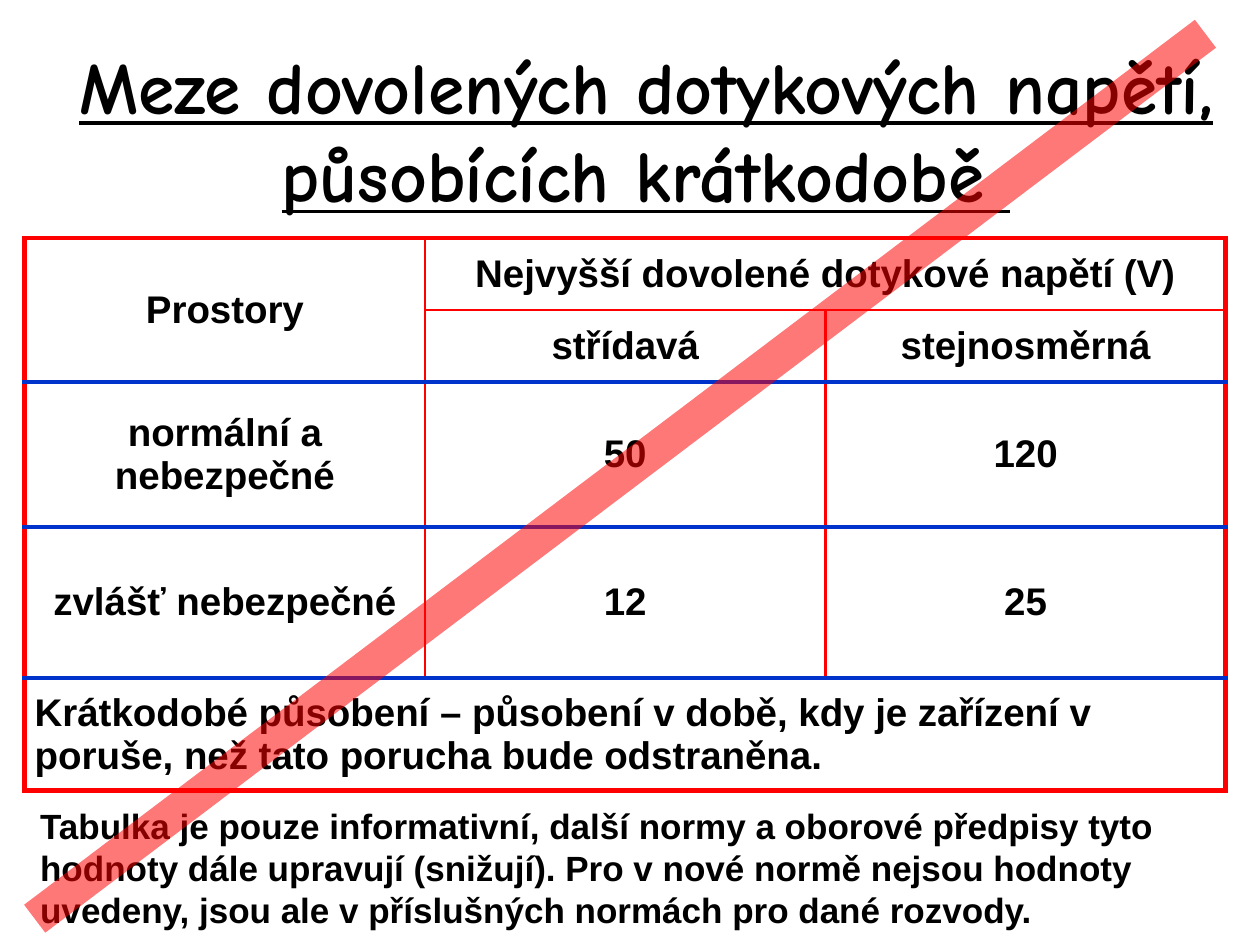
"""Build a slide with limits of permitted touch voltages, crossed out by a red line."""
from lxml import etree
from pptx import Presentation
from pptx import util as u
from pptx.dml.color import RGBColor
from pptx.enum import shapes, text
from pptx.oxml.ns import qn

BLACK = RGBColor(0, 0, 0)
WHITE = RGBColor(255, 255, 255)
RED = RGBColor(255, 0, 0)
BLUE = RGBColor(0, 0x33, 0xCC)
CENTER, LEFT = text.PP_ALIGN.CENTER, text.PP_ALIGN.LEFT
MIDDLE, TOP = text.MSO_ANCHOR.MIDDLE, text.MSO_ANCHOR.TOP

TITLE = "Meze dovolených dotykových napětí, působících krátkodobě "
NOTE = ("Tabulka je pouze informativní, další normy a oborové předpisy tyto "
        "hodnoty dále upravují (snižují). Pro v nové normě nejsou hodnoty "
        "uvedeny, jsou ale v příslušných normách pro dané rozvody.")
DEFINITION = ("Krátkodobé působení – působení v době, kdy je zařízení v "
              "poruše, než tato porucha bude odstraněna.")
CELLS = [
    (0, 0, 2, 1, "Prostory"),
    (0, 1, 1, 2, "Nejvyšší dovolené dotykové napětí (V)"),
    (1, 1, 1, 1, "střídavá"), (1, 2, 1, 1, "stejnosměrná"),
    (2, 0, 1, 1, "normální a nebezpečné"), (2, 1, 1, 1, "50"), (2, 2, 1, 1, "120"),
    (3, 0, 1, 1, "zvlášť nebezpečné"), (3, 1, 1, 1, "12"), (3, 2, 1, 1, "25"),
    (4, 0, 1, 3, DEFINITION),
]
COLUMN_WIDTHS = [8.07, 8.07, 8.07]
ROW_HEIGHTS = [1.45, 1.45, 2.92, 3.05, 2.14]
TITLE_FONT = {"name": "Comic Neue", "size": u.Pt(42), "bold": True, "underline": True}
TABLE_FONT = {"name": "Arial", "size": u.Pt(22), "bold": True}
NOTE_FONT = {"name": "Arial", "size": u.Pt(20), "bold": True}


def set_values(target, values):
    for name, value in values.items():
        setattr(target, name, value)


def write(frame, content, font, alignment):
    paragraph = frame.paragraphs[0]
    paragraph.alignment = alignment
    run = paragraph.add_run()
    run.text = content
    set_values(run.font, font)
    run.font.color.rgb = BLACK


def add_text(slide, box, content, font, alignment, anchor, margin_left):
    frame = slide.shapes.add_textbox(*map(u.Cm, box)).text_frame
    set_values(frame, {"word_wrap": True, "vertical_anchor": anchor,
                       "margin_left": u.Cm(margin_left)})
    write(frame, content, font, alignment)


def line_style(index, count, horizontal):
    if index in (0, count):
        return RED, 3
    return (BLUE, 2.25) if horizontal and index > 1 else (RED, 1.5)


def add_border(cell, side, style):
    properties = cell._tc.get_or_add_tcPr()
    line = etree.Element(qn(f"a:ln{side}"))
    if style:
        color, width = style
        line.set("w", str(u.Pt(width)))
        fill = etree.SubElement(line, qn("a:solidFill"))
        etree.SubElement(fill, qn("a:srgbClr"), val=str(color))
    else:
        etree.SubElement(line, qn("a:noFill"))
    properties.insert("LRTB".index(side), line)


def add_borders(table, row, column, height, width):
    rows, columns = len(ROW_HEIGHTS), len(COLUMN_WIDTHS)
    for r in range(row, row + height):
        for c in range(column, column + width):
            edges = {
                "L": c == column and line_style(c, columns, False),
                "R": c + 1 == column + width and line_style(c + 1, columns, False),
                "T": r == row and line_style(r, rows, True),
                "B": r + 1 == row + height and line_style(r + 1, rows, True),
            }
            if (r, c) == (row, column):
                edges["R"] = line_style(column + width, columns, False)
                edges["B"] = line_style(row + height, rows, True)
            for side, style in edges.items():
                add_border(table.cell(r, c), side, style)


def add_voltage_table(slide):
    box = (0.5, 4.8, sum(COLUMN_WIDTHS), sum(ROW_HEIGHTS))
    table = slide.shapes.add_table(len(ROW_HEIGHTS), len(COLUMN_WIDTHS),
                                   *map(u.Cm, box)).table
    set_values(table, {"first_row": False, "horz_banding": False})
    for column, width in zip(table.columns, COLUMN_WIDTHS):
        column.width = u.Cm(width)
    for row, height in zip(table.rows, ROW_HEIGHTS):
        row.height = u.Cm(height)
    sides = ("left", "right", "top", "bottom")
    cell_format = {f"margin_{side}": u.Cm(0.2) for side in sides}
    cell_format["vertical_anchor"] = MIDDLE
    for row, column, height, width, content in CELLS:
        cell = table.cell(row, column)
        if height * width > 1:
            cell.merge(table.cell(row + height - 1, column + width - 1))
        set_values(cell, cell_format)
        cell.fill.solid()
        cell.fill.fore_color.rgb = WHITE
        write(cell.text_frame, content, TABLE_FONT,
              LEFT if content == DEFINITION else CENTER)
        add_borders(table, row, column, height, width)


def add_strike(slide):
    strike = slide.shapes.add_connector(shapes.MSO_CONNECTOR.STRAIGHT,
                                        *map(u.Cm, (0.7, 18.52, 24.3, 0.68)))
    strike.line.width = u.Pt(20)
    strike.line.color.rgb = RED
    properties = strike._element.spPr
    color = properties.find(".//" + qn("a:srgbClr"))
    etree.SubElement(color, qn("a:alpha"), val="52000")
    etree.SubElement(properties, qn("a:effectLst"))


def main():
    presentation = Presentation()
    set_values(presentation, {"slide_width": u.Cm(25.4), "slide_height": u.Cm(19.05)})
    slide = presentation.slides.add_slide(presentation.slide_layouts[6])
    add_text(slide, (1.1, 0.68, 24, 3.84), TITLE, TITLE_FONT, CENTER, MIDDLE, 0.1)
    add_voltage_table(slide)
    add_text(slide, (0.56, 16.1, 24.13, 2.82), NOTE, NOTE_FONT, LEFT, TOP, 0.25)
    add_strike(slide)
    presentation.save("out.pptx")


if __name__ == "__main__":
    main()
